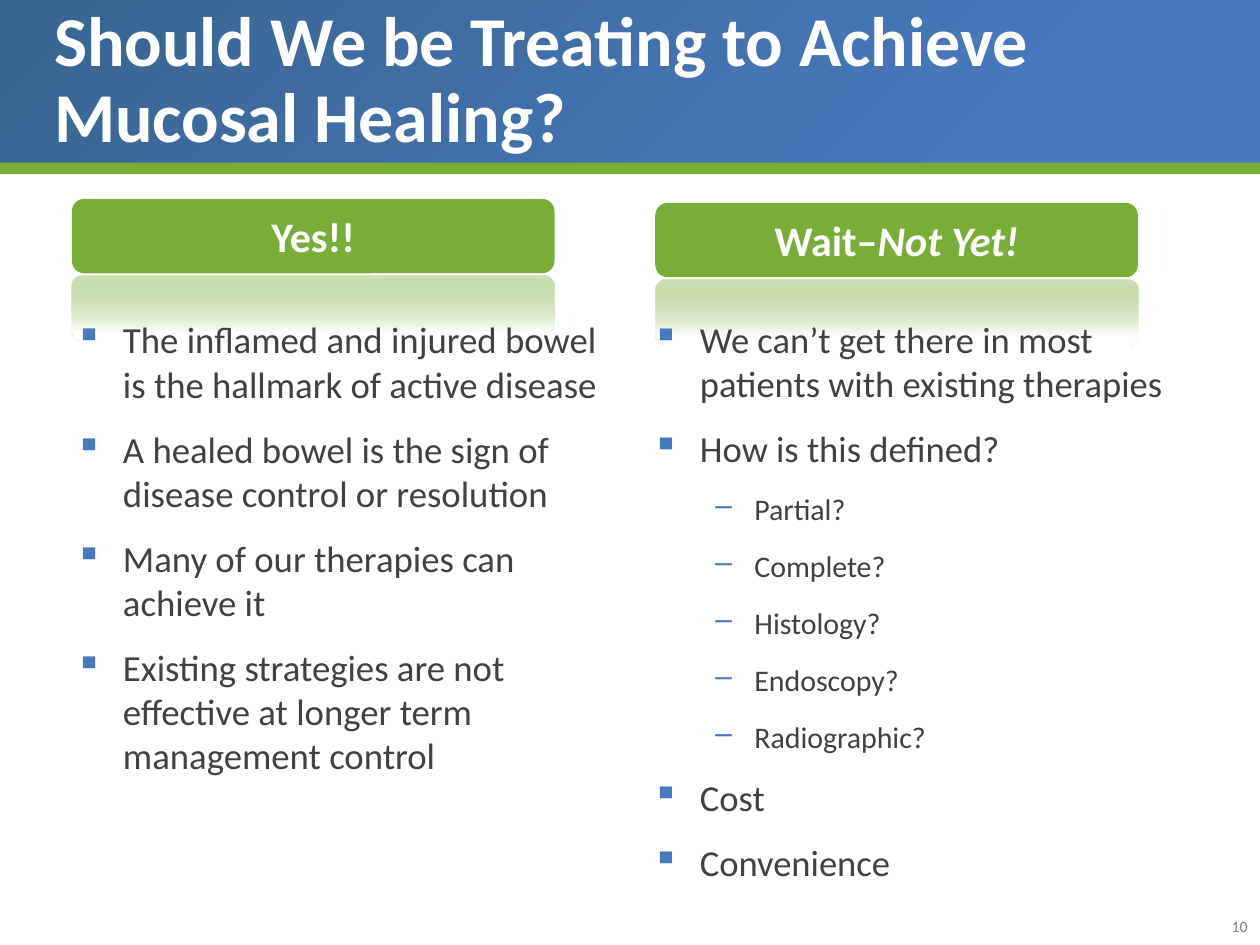
import pptx
import pptx.dml.color
import pptx.enum.shapes
import pptx.enum.text
import pptx.oxml
import pptx.oxml.ns
import pptx.util

Cm = pptx.util.Cm
Pt = pptx.util.Pt
RGBColor = pptx.dml.color.RGBColor
Shape = pptx.enum.shapes.MSO_SHAPE
Anchor = pptx.enum.text.MSO_ANCHOR
Align = pptx.enum.text.PP_ALIGN
qn = pptx.oxml.ns.qn

GREEN = RGBColor(0x79, 0xAD, 0x38)
BLUE = RGBColor(0x48, 0x78, 0xBD)
DEEP_BLUE = RGBColor(0x39, 0x64, 0x90)
WHITE = RGBColor(0xFF, 0xFF, 0xFF)
INK = RGBColor(0x41, 0x41, 0x41)
GRAY = RGBColor(0x7F, 0x7F, 0x7F)

FROM_TOP_LEFT = '<a:path path="circle"><a:fillToRect r="100000" b="100000"/></a:path>'
DOWNWARD = '<a:lin ang="5400000" scaled="0"/>'

# Per level: bullet character, left indent and hanging width in cm
LEVELS = [("▪", 0.96, 0.96), ("–", 2.06, 0.79)]

YES_POINTS = [
    (0, "The inflamed and injured bowel is the hallmark of active disease"),
    (0, "A healed bowel is the sign of disease control or resolution"),
    (0, "Many of our therapies can achieve it"),
    (0, "Existing strategies are not effective at longer term management control"),
]
WAIT_POINTS = [
    (0, "We can’t get there in most patients with existing therapies"),
    (0, "How is this defined?"),
    (1, "Partial?"),
    (1, "Complete?"),
    (1, "Histology?"),
    (1, "Endoscopy?"),
    (1, "Radiographic?"),
    (0, "Cost"),
    (0, "Convenience"),
]


class SlideBuilder:
    font_name = "Calibri"

    def __init__(self, slide):
        self.slide = slide

    def style(self, paragraph, size, color, bold=None):
        paragraph.font.name = self.font_name
        paragraph.font.size = Pt(size)
        paragraph.font.color.rgb = color
        paragraph.font.bold = bold

    def block(self, left, top, width, height, color=None, kind=Shape.RECTANGLE, parent=None):
        shapes = (parent or self.slide).shapes
        block = shapes.add_shape(kind, Cm(left), Cm(top), Cm(width), Cm(height))
        block.shadow.inherit = False
        block.line.fill.background()
        if color is not None:
            block.fill.solid()
            block.fill.fore_color.rgb = color
        return block

    def shade(self, block, stops, direction):
        """Fill with a gradient; each stop is (position %, colour, opacity %)."""
        marks = "".join(
            f'<a:gs pos="{position * 1000}"><a:srgbClr val="{color}">'
            f'<a:alpha val="{opacity * 1000}"/></a:srgbClr></a:gs>'
            for position, color, opacity in stops
        )
        gradient = pptx.oxml.parse_xml(
            f'<a:gradFill {pptx.oxml.ns.nsdecls("a")} rotWithShape="1">'
            f"<a:gsLst>{marks}</a:gsLst>{direction}</a:gradFill>"
        )
        block.fill.background()
        properties = block.element.spPr
        properties.replace(properties.find(qn("a:noFill")), gradient)

    def text_box(self, left, top, width, height):
        box = self.slide.shapes.add_textbox(Cm(left), Cm(top), Cm(width), Cm(height))
        box.text_frame.word_wrap = True
        return box.text_frame

    def title(self, text):
        frame = self.text_box(0.84, 0.81, 24.56, 2.49)
        frame.vertical_anchor = Anchor.BOTTOM
        heading = frame.paragraphs[0]
        heading.text = text
        heading.line_spacing = 0.9
        self.style(heading, 40, WHITE, bold=True)

    def page_number(self, number):
        line = self.text_box(24.33, 18.36, 1.07, 0.64).paragraphs[0]
        line.text = str(number)
        line.alignment = Align.RIGHT
        self.style(line, 9, GRAY)

    def verdict(self, left, top, plain, emphasis=""):
        """Button with a fading reflection beneath it."""
        group = self.slide.shapes.add_group_shape()
        reflection = self.block(left, top + 1.55, 9.73, 1.3,
                                kind=Shape.ROUNDED_RECTANGLE, parent=group)
        self.shade(reflection, [(0, GREEN, 37), (87, WHITE, 100)], DOWNWARD)
        button = self.block(left, top, 9.73, 1.5, GREEN, Shape.ROUNDED_RECTANGLE, group)
        button.text_frame.word_wrap = False
        button.text_frame.vertical_anchor = Anchor.MIDDLE
        label = button.text_frame.paragraphs[0]
        label.alignment = Align.CENTER
        label.add_run().text = plain
        if emphasis:
            run = label.add_run()
            run.text = emphasis
            run.font.italic = True
        self.style(label, 24, WHITE, bold=True)

    def bullet(self, paragraph, level):
        character, indent, hanging = LEVELS[level]
        paragraph.level = level
        paragraph.space_after = Pt(12)
        properties = paragraph._p.get_or_add_pPr()
        properties.set("marL", str(Cm(indent)))
        properties.set("indent", str(-Cm(hanging)))
        color = properties.makeelement(qn("a:buClr"), {})
        color.append(color.makeelement(qn("a:srgbClr"), {"val": str(BLUE)}))
        properties.append(color)
        properties.append(properties.makeelement(qn("a:buChar"), {"char": character}))

    def points(self, left, items, sizes):
        frame = self.text_box(left, 6.27, 11.23, 10.97)
        for index, (level, text) in enumerate(items):
            point = frame.add_paragraph() if index else frame.paragraphs[0]
            point.text = text
            self.bullet(point, level)
            self.style(point, sizes[level], INK)


def main():
    presentation = pptx.Presentation()
    presentation.slide_width = Cm(25.4)
    presentation.slide_height = Cm(19.05)
    builder = SlideBuilder(presentation.slides.add_slide(presentation.slide_layouts[6]))

    banner = builder.block(0, 0, 25.4, 3.48)
    builder.shade(banner, [(0, DEEP_BLUE, 100), (79, BLUE, 100)], FROM_TOP_LEFT)
    builder.page_number(10)
    builder.block(0, 3.28, 25.4, 0.23, GREEN)
    builder.title("Should We be Treating to Achieve Mucosal Healing?")

    builder.verdict(1.45, 4.01, "Yes!!")
    builder.verdict(13.21, 4.09, "Wait–", "Not Yet!")
    builder.points(1.27, YES_POINTS, [21])
    builder.points(12.9, WAIT_POINTS, [20.9, 17.1])

    presentation.save("out.pptx")


if __name__ == "__main__":
    main()
